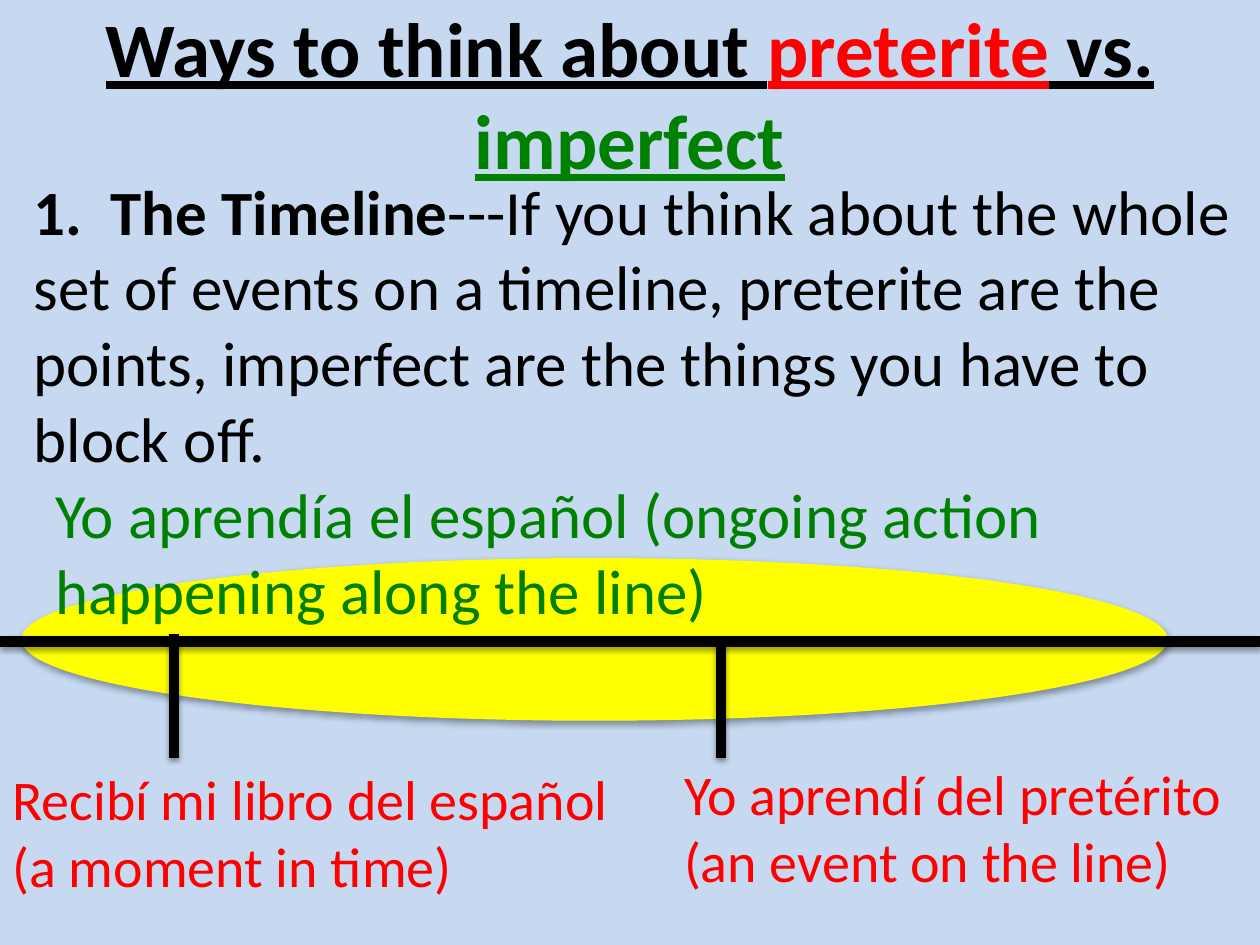
from pptx import Presentation, util as u
from pptx.dml.color import RGBColor
from pptx.enum import shapes, text
from pptx.oxml import parse_xml
from pptx.oxml.ns import nsdecls

SKY = RGBColor(0xC6, 0xD9, 0xF1)
YELLOW = RGBColor(0xFF, 0xFF, 0x00)
BLACK = RGBColor(0, 0, 0)
RED = RGBColor(0xFF, 0, 0)
GREEN = RGBColor(0, 0x80, 0)
FONT = "Calibri"
WIDE, HIGH = 25.4, 19.05  # all lengths in cm

# Content: runs are (words, colour, bold)
TITLE = [("Ways to think about ", BLACK, True), ("preterite", RED, True),
         (" vs. ", BLACK, True), ("imperfect", GREEN, True)]
# Notes: left, top, width, height, size, runs
NOTES = [
    (0.43, 3.35, 24.97, 6.4, 36, [
        ("1.  The Timeline", BLACK, True),
        ("---If you think about the whole set of events on a timeline, "
         "preterite are the points, imperfect are the things you have to "
         "block off.", BLACK, False)]),
    (13.54, 15.19, 11.86, 3, 32,
     [("Yo aprendí del pretérito (an event on the line)", RED, False)]),
    (0, 15.29, 13.11, 3, 32,
     [("Recibí mi libro del español (a moment in time)", RED, False)]),
    (0.86, 9.47, 24.54, 3.33, 36,
     [("Yo aprendía el español (ongoing action happening along the line)",
       GREEN, False)]),
]
SPAN = (0.43, 11.25, 23.11, 3.28)  # the ongoing action
AXIS, FOOT = 12.93, 15.29
# Timeline and its two ticks: x1, y1, x2, y2
LINES = [(0, AXIS, WIDE, AXIS),
         (14.53, AXIS, 14.53, FOOT),
         (3.51, 12.78, 3.51, FOOT)]


def shade(shape, dist, alpha):
    """Give the shape a soft shadow straight below it."""
    shape._element.spPr.append(parse_xml(
        f'<a:effectLst {nsdecls("a")}><a:outerShdw blurRad="{u.Pt(3.1)}" '
        f'dist="{u.Pt(dist)}" dir="5400000" rotWithShape="0">'
        f'<a:srgbClr val="000000"><a:alpha val="{alpha * 1000}"/></a:srgbClr>'
        '</a:outerShdw></a:effectLst>'))


def write(slide, box, size, runs, title=False):
    frame = slide.shapes.add_textbox(*map(u.Cm, box)).text_frame
    frame.word_wrap = True
    para = frame.paragraphs[0]
    if title:
        frame.vertical_anchor = text.MSO_ANCHOR.MIDDLE
        para.alignment = text.PP_ALIGN.CENTER
    for words, color, bold in runs:
        run = para.add_run()
        run.text = words
        font = run.font
        font.name, font.size, font.bold = FONT, u.Pt(size), bold
        font.color.rgb = color
        if title:
            font.underline = True


def main():
    deck = Presentation()
    deck.slide_width, deck.slide_height = u.Cm(WIDE), u.Cm(HIGH)
    slide = deck.slides.add_slide(deck.slide_layouts[6])
    slide.background.fill.solid()
    slide.background.fill.fore_color.rgb = SKY

    # Blocked-off span, behind everything
    oval = slide.shapes.add_shape(shapes.MSO_SHAPE.OVAL, *map(u.Cm, SPAN))
    oval.fill.solid()
    oval.fill.fore_color.rgb = YELLOW
    oval.line.fill.background()
    shade(oval, 1.8, 35)

    # Timeline
    for ends in LINES:
        line = slide.shapes.add_connector(
            shapes.MSO_CONNECTOR.STRAIGHT, *map(u.Cm, ends))
        line.line.color.rgb = BLACK
        line.line.width = u.Pt(6)
        shade(line, 1.6, 38)

    # Text
    write(slide, (0, -0.2, WIDE, 4.14), 44, TITLE, title=True)
    for *box, size, runs in NOTES:
        write(slide, box, size, runs)

    deck.save("out.pptx")


if __name__ == "__main__":
    main()
